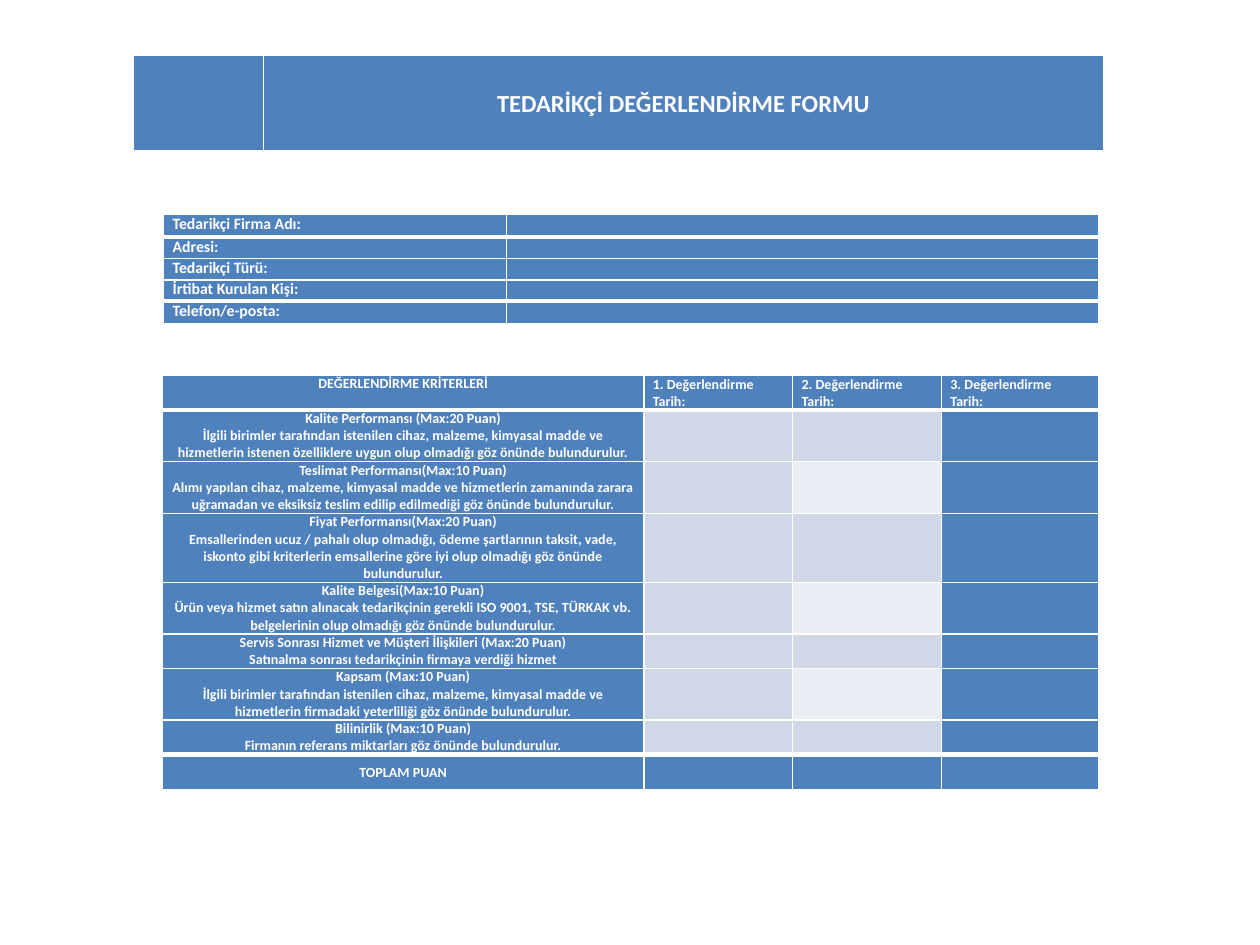
import pptx
import pptx.dml.color
import pptx.enum.text
import pptx.oxml.ns
import pptx.util
from lxml import etree

Cm = pptx.util.Cm
Pt = pptx.util.Pt
qn = pptx.oxml.ns.qn
Align = pptx.enum.text.PP_ALIGN
Anchor = pptx.enum.text.MSO_ANCHOR

THEME = {
    "font": "Calibri",
    "blue": "4F81BD",
    "band": "D0D8E8",
    "pale": "E9EDF4",
    "white": "FFFFFF",
    "title": 14,
    "label": 9,
    "criteria": 8,
    "thin": 1,
    "thick": 3,
}


def set_borders(cell, thick_side):
    properties = cell._tc.get_or_add_tcPr()
    for side in "LRTB":
        width = THEME["thick" if side == thick_side else "thin"]
        line = etree.SubElement(properties, qn(f"a:ln{side}"), w=str(Pt(width)))
        fill = etree.SubElement(line, qn("a:solidFill"))
        etree.SubElement(fill, qn("a:srgbClr"), val=THEME["white"])


def add_grid(slide, left, top, widths, heights, rows, size, thick_sides, fills=None, centred=(), middle=()):
    frame = slide.shapes.add_table(
        len(heights), len(widths), Cm(left), Cm(top), Cm(sum(widths)), Cm(sum(heights))
    )
    table = frame.table
    table.first_row = False
    table.horz_banding = False
    for column, width in zip(table.columns, widths):
        column.width = Cm(width)
    for i, height in enumerate(heights):
        table.rows[i].height = Cm(height)
        for j in range(len(widths)):
            cell = table.cell(i, j)
            set_borders(cell, thick_sides.get(i))
            cell.fill.solid()
            colour = (fills or {}).get((i, j), "blue")
            cell.fill.fore_color.rgb = pptx.dml.color.RGBColor.from_string(THEME[colour])
            cell.margin_left = cell.margin_right = Cm(0.18)
            cell.margin_top = cell.margin_bottom = 0
            if (i, j) in middle:
                cell.vertical_anchor = Anchor.MIDDLE
            lines = rows[i][j] if j < len(rows[i]) else []
            if not lines:
                etree.SubElement(
                    cell.text_frame.paragraphs[0]._p, qn("a:endParaRPr"), sz=str(size * 100)
                )
            for k, line in enumerate(lines):
                para = cell.text_frame.add_paragraph() if k else cell.text_frame.paragraphs[0]
                para.alignment = Align.CENTER if j in centred else Align.LEFT
                span = para.add_run()
                span.text = line
                span.font.name = THEME["font"]
                span.font.size = Pt(size)
                span.font.bold = True
                span.font.color.rgb = pptx.dml.color.RGBColor.from_string(THEME["white"])
    return frame


deck = pptx.Presentation()
deck.slide_width = Cm(25.4)
deck.slide_height = Cm(19.05)
page = deck.slides.add_slide(deck.slide_layouts[6])

add_grid(
    page, 2.69, 1.12, [2.62, 16.94], [1.96],
    [[[], ["TEDARİKÇİ DEĞERLENDİRME FORMU"]]],
    THEME["title"], {0: "B"}, centred=(1,), middle={(0, 1)},
)

supplier_labels = [
    "Tedarikçi Firma Adı:",
    "Adresi:",
    "Tedarikçi Türü:",
    "İrtibat Kurulan Kişi:",
    "Telefon/e-posta:",
]
add_grid(
    page, 3.3, 4.32, [6.91, 11.94], [0.46, 0.43, 0.43, 0.43, 0.46],
    [[[label]] for label in supplier_labels],
    THEME["label"], {0: "B", 4: "T"},
)

criteria = [
    ["Kalite Performansı (Max:20 Puan)",
     "İlgili birimler tarafından istenilen cihaz, malzeme, kimyasal madde ve hizmetlerin istenen özelliklere uygun olup olmadığı göz önünde bulundurulur."],
    ["Teslimat Performansı(Max:10 Puan)",
     "Alımı yapılan cihaz, malzeme, kimyasal madde ve hizmetlerin zamanında zarara uğramadan ve eksiksiz teslim edilip edilmediği göz önünde bulundurulur."],
    ["Fiyat Performansı(Max:20 Puan)",
     "Emsallerinden ucuz / pahalı olup olmadığı, ödeme şartlarının taksit, vade, iskonto gibi kriterlerin emsallerine göre iyi olup olmadığı göz önünde bulundurulur."],
    ["Kalite Belgesi(Max:10 Puan)",
     "Ürün veya hizmet satın alınacak tedarikçinin gerekli ISO 9001, TSE, TÜRKAK vb. belgelerinin olup olmadığı göz önünde bulundurulur."],
    ["Servis Sonrası Hizmet ve Müşteri İlişkileri (Max:20 Puan)",
     "Satınalma sonrası tedarikçinin firmaya verdiği hizmet"],
    ["Kapsam (Max:10 Puan)",
     "İlgili birimler tarafından istenilen cihaz, malzeme, kimyasal madde ve hizmetlerin firmadaki yeterliliği göz önünde bulundurulur."],
    ["Bilinirlik (Max:10 Puan)",
     "Firmanın referans miktarları göz önünde bulundurulur."],
]
header = [["DEĞERLENDİRME KRİTERLERİ"]]
header += [[f"{number}. Değerlendirme", "Tarih:"] for number in (1, 2, 3)]
score_fills = {}
for i in range(1, len(criteria) + 1):
    score_fills[i, 1] = "band"
    score_fills[i, 2] = "band" if i % 2 else "pale"

evaluation = add_grid(
    page, 3.28, 7.57, [9.7, 3, 3, 3.17],
    [0.61, 0.97, 0.89, 0.86, 0.81, 0.61, 0.56, 0.69, 0.71],
    [header] + [[lines] for lines in criteria] + [[["TOPLAM PUAN"]]],
    THEME["criteria"], {0: "B", 8: "T"}, score_fills,
    centred=(0,), middle={(0, 1), (0, 2), (0, 3), (8, 0)},
)
evaluation.height = Cm(8.15)

deck.save("out.pptx")
